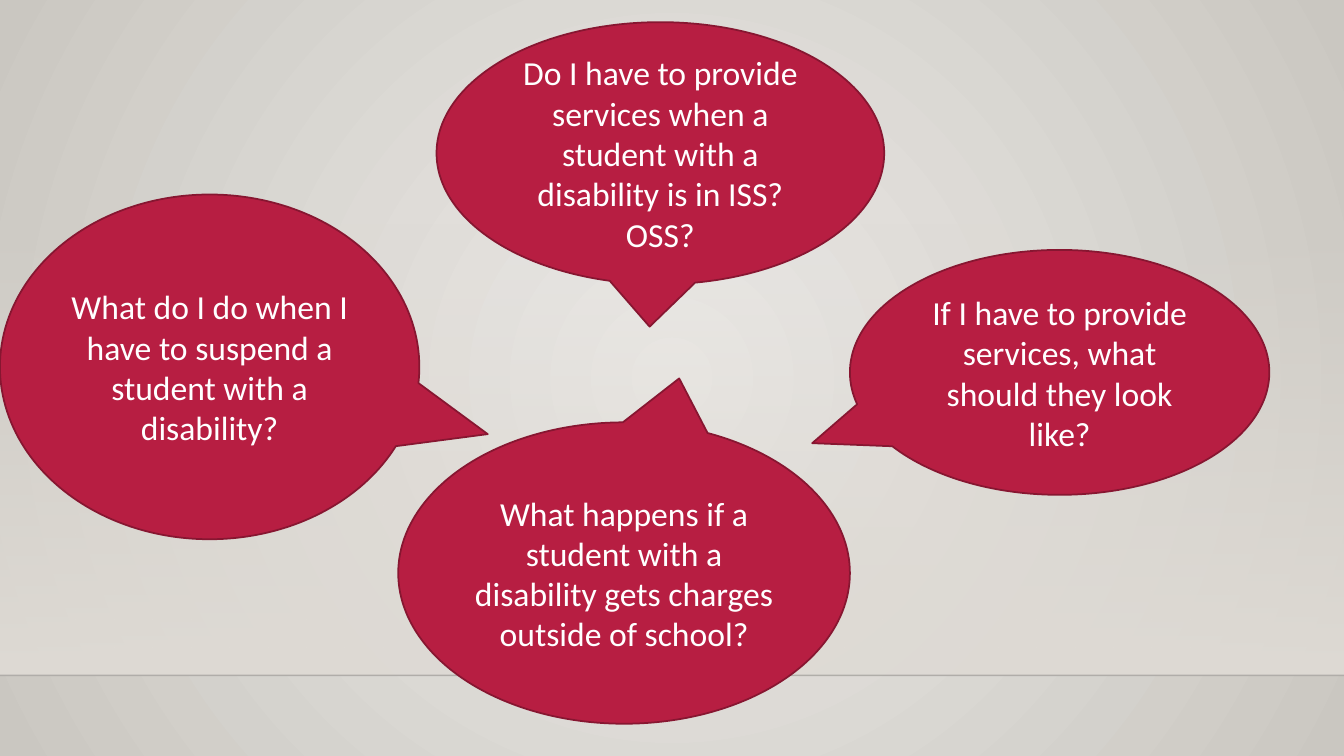
from lxml import etree
from pptx import Presentation
from pptx import util as u
from pptx.dml.color import RGBColor
from pptx.enum import shapes, text
from pptx.oxml import parse_xml
from pptx.oxml.ns import nsdecls, qn

W, H = 13.33, 7.5
FLOOR_TOP = 6.7
QUESTIONS = [
    ((0, 1.93, 4.16, 3.42), (0.663, 0.195),
     "What do I do when I have to suspend a student with a disability?"),
    ((3.95, 4.19, 4.48, 2.99), (0.122, -0.646),
     "What happens if a student with a disability gets charges outside of school?"),
    ((4.33, 0.22, 4.44, 2.6), (-0.024, 0.662),
     "Do I have to provide services when a student with a disability is in ISS? OSS?"),
    ((8.43, 2.48, 4.16, 2.43), (-0.59, 0.289),
     "If I have to provide services, what should they look like?"),
]


def rgb(value):
    """Turn a hex string into a colour."""
    return RGBColor.from_string(value)


def set_alpha(color, percent):
    """Give a colour element its opacity."""
    etree.SubElement(color, qn("a:alpha")).set("val", str(percent * 1000))


def set_gradient(fill, owner, colors, direction):
    """Fill with a two-stop gradient and return its colour elements."""
    fill.gradient()
    for stop, position, color in zip(fill.gradient_stops, (0, 1), colors):
        stop.position = position
        stop.color.rgb = rgb(color)
    grad = owner.find(".//" + qn("a:gradFill"))
    lin = grad.find(qn("a:lin"))
    grad.replace(lin, parse_xml(direction))
    return grad.findall(".//" + qn("a:srgbClr"))


def add_backdrop(s):
    """Draw the radial background, the wall shade and the floor line."""
    ns = nsdecls("a")
    set_gradient(s.background.fill, s.element, ("ECEAE7", "CAC7C1"),
                 f'<a:path {ns} path="circle"><a:fillToRect l="50000" t="50000" '
                 'r="50000" b="50000"/></a:path>')
    wall = s.shapes.add_shape(shapes.MSO_SHAPE.RECTANGLE, 0, u.Inches(2.21),
                              u.Inches(W), u.Inches(FLOOR_TOP - 2.21))
    wall.shadow.inherit = False
    wall.line.fill.background()
    stops = set_gradient(wall.fill, wall._element, ("DFDBD5", "DFDBD5"),
                         f'<a:lin {ns} ang="5400000" scaled="0"/>')
    set_alpha(stops[0], 0)
    floor = s.shapes.add_connector(shapes.MSO_CONNECTOR.STRAIGHT, 0, u.Inches(FLOOR_TOP),
                                   u.Inches(W), u.Inches(FLOOR_TOP))
    floor.line.color.rgb = rgb("000001")
    floor.line.width = u.Pt(1)
    set_alpha(floor._element.find(".//" + qn("a:srgbClr")), 20)
    etree.SubElement(floor._element.spPr, qn("a:effectLst"))


def add_question(s, box, tail, question):
    """Place a speech balloon whose tail is given as shares of its box."""
    sp = s.shapes.add_shape(shapes.MSO_SHAPE.OVAL_CALLOUT, *map(u.Inches, box))
    for i, share in enumerate(tail):
        sp.adjustments[i] = share
    sp.shadow.inherit = False
    sp.fill.solid()
    sp.fill.fore_color.rgb = rgb("B71E42")
    sp.line.color.rgb = rgb("871631")
    sp.line.width = u.Pt(1.25)
    tf = sp.text_frame
    tf.word_wrap = True
    tf.vertical_anchor = text.MSO_ANCHOR.MIDDLE
    p = tf.paragraphs[0]
    p.alignment = text.PP_ALIGN.CENTER
    r = p.add_run()
    r.text = question
    for name, value in {"name": "Calibri", "size": u.Pt(24)}.items():
        setattr(r.font, name, value)
    r.font.color.rgb = rgb("FFFFFF")


def main():
    """Build and save the slide."""
    prs = Presentation()
    prs.slide_width, prs.slide_height = u.Inches(W), u.Inches(H)
    s = prs.slides.add_slide(prs.slide_layouts[6])
    add_backdrop(s)
    for box, tail, question in QUESTIONS:
        add_question(s, box, tail, question)
    prs.save("out.pptx")


if __name__ == "__main__":
    main()
